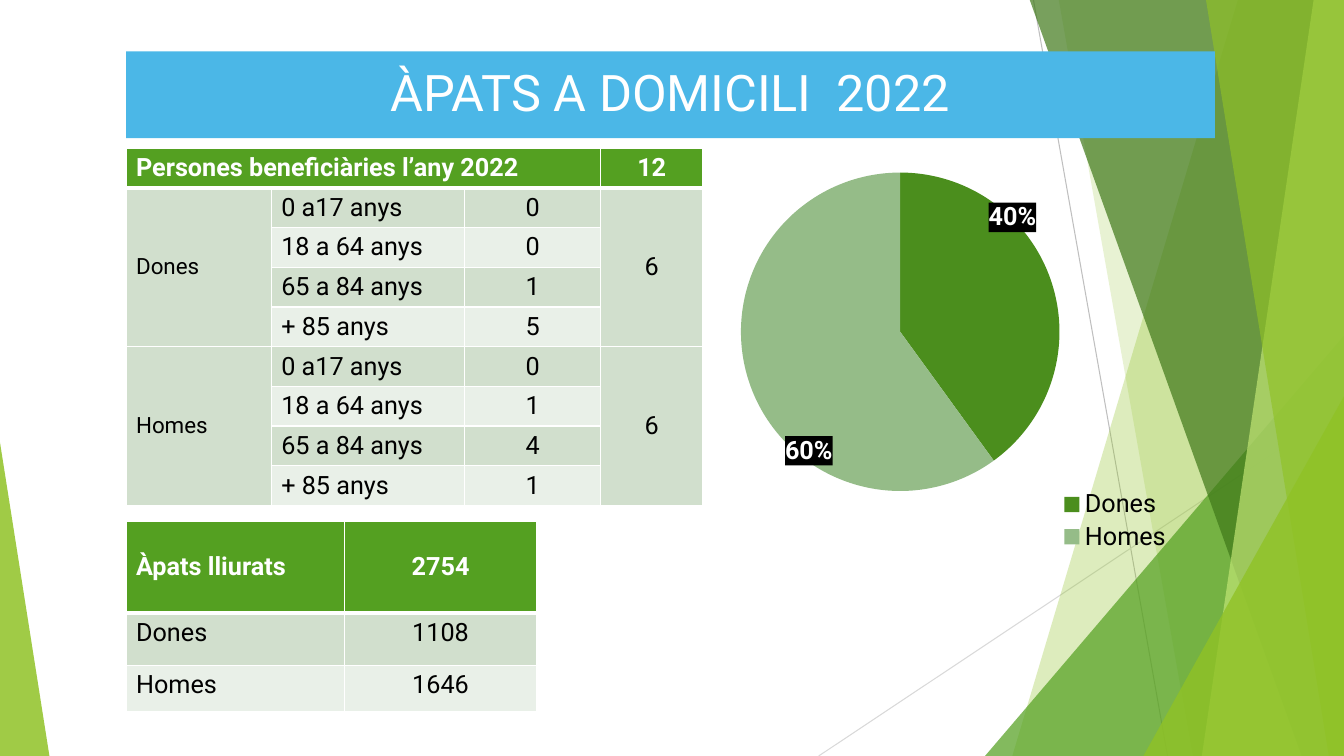
from lxml import etree
from pptx import Presentation
from pptx.chart.data import CategoryChartData
from pptx.dml.color import RGBColor
from pptx.enum.chart import XL_CHART_TYPE as ChartType, XL_LEGEND_POSITION as LegendPosition
from pptx.enum.shapes import MSO_CONNECTOR as Connector, MSO_SHAPE as Shape
from pptx.enum.text import MSO_ANCHOR as Anchor, PP_ALIGN as Align
from pptx.oxml import parse_xml
from pptx.oxml.ns import nsdecls, qn
from pptx.util import Inches, Pt

# Content
FONT = "Roboto"
TITLE = "ÀPATS A DOMICILI  2022"
AGES = ["0 a17 anys", "18 a 64 anys", "65 a 84 anys", "+ 85 anys"]
PEOPLE_HEADER = ("Persones beneficiàries l’any 2022", "12")
GROUPS = [("Dones", [0, 0, 1, 5], 6), ("Homes", [0, 1, 4, 1], 6)]
MEALS = [("Àpats lliurats", "2754"), ("Dones", "1108"), ("Homes", "1646")]
SHARES = {"Dones": 40, "Homes": 60}

COLORS = {
    "white": "FFFFFF", "black": "000000", "title": "4BB7E7", "header": "54A021",
    "band": "D1DFCD", "pale": "E9F0E8", "Dones": "4B8E1D", "Homes": "95BC88",
    "leaf": "90C226", "grass": "54A021", "forest": "3F7819", "lime": "C0E474",
    "grey": "BFBFBF", "mist": "D9D9D9",
}

# Background: lines (from, to, colour), then facets from back to front
LINES = [((10.25, 0), (11.58, 7.5), "grey"), ((13.33, 4.03), (8.12, 7.5), "mist")]
TOP, BOTTOM, RIGHT = -0.01, 7.5, 13.33
# "band": left edge at top and bottom; "triangle": left, top, width, apex
FACETS = [
    ("band", (12.28, 10.04), "leaf", 30),
    ("band", (10.5, 11.83), "leaf", 20),
    ("triangle", (9.77, 3.33, 3.56, 1), "grass", 72),
    ("band", (10.21, 12.91), "forest", 70),
    ("band", (13.03, 11.92), "lime", 70),
    ("band", (11.96, 13.18), "leaf", 65),
    ("triangle", (11.34, 3.93, 1.99, 1), "leaf", 80),
    ("triangle", (0, 4.39, 0.49, 0), "leaf", 85),
]

# Shift of each percentage from the middle of its slice, as shares of the chart
LABEL_SHIFTS = [(0.07, -0.2), (-0.03, 0.21)]


def rgb(name):
    return RGBColor.from_string(COLORS[name])


def style_text(frame, size, color, bold=False, align=Align.LEFT):
    for paragraph in frame.paragraphs:
        paragraph.alignment = align
        for run in paragraph.runs:
            run.font.name, run.font.size, run.font.bold = FONT, Pt(size), bold
            run.font.color.rgb = rgb(color)


def add_background(slide):
    for start, end, color in LINES:
        line = slide.shapes.add_connector(Connector.STRAIGHT, *map(Inches, start + end))
        line.line.color.rgb = rgb(color)
        line.line.width = Pt(0.75)
        etree.SubElement(line.element.spPr, qn("a:effectLst"))
    for kind, numbers, color, opacity in FACETS:
        if kind == "band":
            upper, lower = numbers
            builder = slide.shapes.build_freeform(Inches(upper), Inches(TOP))
            corners = [(RIGHT, TOP), (RIGHT, BOTTOM), (lower, BOTTOM)]
            builder.add_line_segments([(Inches(x), Inches(y)) for x, y in corners])
            shape = builder.convert_to_shape()
        else:
            left, top, width, apex = numbers
            box = map(Inches, (left, top, width, BOTTOM - top))
            shape = slide.shapes.add_shape(Shape.ISOSCELES_TRIANGLE, *box)
            shape.adjustments[0] = apex
        shape.shadow.inherit = False
        shape.line.fill.background()
        shape.fill.solid()
        shape.fill.fore_color.rgb = rgb(color)
        tint = shape.element.spPr.find(qn("a:solidFill"))[0]
        etree.SubElement(tint, qn("a:alpha"), val=str(opacity * 1000))


def add_title(slide):
    title = slide.shapes.title
    title.left, title.top, title.width, title.height = map(Inches, (1.25, 0.51, 10.8, 0.86))
    title.fill.solid()
    title.fill.fore_color.rgb = rgb("title")
    title.text_frame.text = TITLE
    title.text_frame.vertical_anchor = Anchor.MIDDLE
    title.text_frame.paragraphs[0].line_spacing = 0.9
    style_text(title.text_frame, 36, "white", align=Align.CENTER)
    title.element.getparent().append(title.element)  # in front of the background


def format_cell(cell, fill, row):
    cell.fill.solid()
    cell.fill.fore_color.rgb = rgb(fill)
    widths = {"L": 1, "R": 1, "T": 3 if row == 1 else 1, "B": 3 if row == 0 else 1}
    properties = cell._tc.get_or_add_tcPr()
    for index, (side, width) in enumerate(widths.items()):
        properties.insert(index, parse_xml(
            f'<a:ln{side} {nsdecls("a")} w="{Pt(width)}"><a:solidFill>'
            f'<a:srgbClr val="{COLORS["white"]}"/></a:solidFill></a:ln{side}>'))


def add_table(slide, box, columns, heights, texts, fill_of, centred, anchor, size_of):
    frame = slide.shapes.add_table(len(heights), len(columns), *map(Inches, box))
    table = frame.table
    for column, width in zip(table.columns, columns):
        column.width = Inches(width)
    for row, height in zip(table.rows, heights):
        row.height = Inches(height)
    frame.height = Inches(box[3])
    for r, row in enumerate(texts):
        for c, text in enumerate(row):
            cell = table.cell(r, c)
            cell.text = text
            cell.vertical_anchor = Anchor.MIDDLE if r == 0 else anchor
            style_text(cell.text_frame, size_of(r, c), "black" if r else "white",
                       r == 0, Align.CENTER if c in centred else Align.LEFT)
            format_cell(cell, fill_of(r, c), r)
    return table


def band_color(row):
    return "header" if row == 0 else "band" if row % 2 else "pale"


def add_meals_table(slide):
    add_table(slide, (1.25, 5.17, 4.07, 1.89), [2.17, 1.9], [0.91, 0.52, 0.46], MEALS,
              lambda r, c: band_color(r), {1}, Anchor.TOP, lambda r, c: 18)


def add_people_table(slide):
    texts = [(PEOPLE_HEADER[0], "", "", PEOPLE_HEADER[1])]
    for name, counts, total in GROUPS:
        for index, (age, count) in enumerate(zip(AGES, counts)):
            first = index == 0
            texts.append((name if first else "", age, str(count), str(total) if first else ""))
    table = add_table(
        slide, (1.25, 1.47, 5.72, 3.6), [1.44, 1.92, 1.35, 1.01],
        [0.33] + [0.3] * (len(texts) - 1), texts,
        lambda r, c: "band" if r and c in (0, 3) else band_color(r),
        {2, 3}, Anchor.MIDDLE, lambda r, c: 16 if r and c == 0 else 18)
    table.cell(0, 0).merge(table.cell(0, 2))
    for top in range(1, len(texts), len(AGES)):
        for column in (0, 3):
            table.cell(top, column).merge(table.cell(top + len(AGES) - 1, column))


def manual_layout(x, y, size=None, inner=False):
    target = '<c:layoutTarget val="inner"/>' if inner else ""
    modes = '<c:xMode val="edge"/><c:yMode val="edge"/>' if size else ""
    extent = f'<c:w val="{size[0]}"/><c:h val="{size[1]}"/>' if size else ""
    return (f'<c:layout {nsdecls("c")}><c:manualLayout>{target}{modes}'
            f'<c:x val="{x}"/><c:y val="{y}"/>{extent}</c:manualLayout></c:layout>')


def percent_labels():
    look = (f'<c:numFmt formatCode="0%" sourceLinked="0"/><c:spPr><a:solidFill>'
            f'<a:srgbClr val="{COLORS["black"]}"/></a:solidFill></c:spPr>'
            f'<c:txPr><a:bodyPr/><a:p><a:pPr><a:defRPr sz="1800" b="1"><a:solidFill>'
            f'<a:srgbClr val="{COLORS["white"]}"/></a:solidFill><a:latin typeface="{FONT}"/>'
            f'</a:defRPr></a:pPr><a:endParaRPr lang="ca"/></a:p></c:txPr><c:dLblPos val="ctr"/>')
    for part in ("LegendKey", "Val", "CatName", "SerName", "Percent", "BubbleSize"):
        look += f'<c:show{part} val="{int(part == "Percent")}"/>'
    points = "".join(f'<c:dLbl><c:idx val="{index}"/>{manual_layout(*shift)}{look}</c:dLbl>'
                     for index, shift in enumerate(LABEL_SHIFTS))
    return parse_xml(f'<c:dLbls {nsdecls("c", "a")}>{points}{look}'
                     '<c:showLeaderLines val="0"/></c:dLbls>')


def add_pie(slide):
    data = CategoryChartData()
    data.categories = list(SHARES)
    data.add_series("Series 1", list(SHARES.values()))
    box = map(Inches, (6.52, 1.04, 5.18, 4.46))
    chart = slide.shapes.add_chart(ChartType.PIE, *box, data).chart
    chart.has_title = False
    chart.font.name, chart.font.size = FONT, Pt(18)
    chart.font.color.rgb = rgb("black")
    chart.plots[0].vary_by_categories = True
    for index, name in enumerate(SHARES):
        fill = chart.plots[0].series[0].points[index].format.fill
        fill.solid()
        fill.fore_color.rgb = rgb(name)
    chart.has_legend = True
    chart.legend.position = LegendPosition.RIGHT
    chart.legend.include_in_layout = False
    # Labels and fixed places of the pie and legend
    root = chart.element
    next(root.iter(qn("c:cat"))).addprevious(percent_labels())
    plot_area = next(root.iter(qn("c:plotArea")))
    legend = next(root.iter(qn("c:legend")))
    for parent in (plot_area, legend):
        for layout in parent.findall(qn("c:layout")):
            parent.remove(layout)
    plot_area.insert(0, parse_xml(manual_layout(0.16, 0.15, (0.61, 0.71), inner=True)))
    legend.find(qn("c:legendPos")).addnext(parse_xml(manual_layout(0.78, 0.85, (0.21, 0.15))))


def main():
    presentation = Presentation()
    presentation.slide_width, presentation.slide_height = Inches(13.33), Inches(7.5)
    slide = presentation.slides.add_slide(presentation.slide_layouts[5])
    for add_part in (add_background, add_title, add_meals_table, add_pie, add_people_table):
        add_part(slide)
    presentation.save("out.pptx")


if __name__ == "__main__":
    main()
